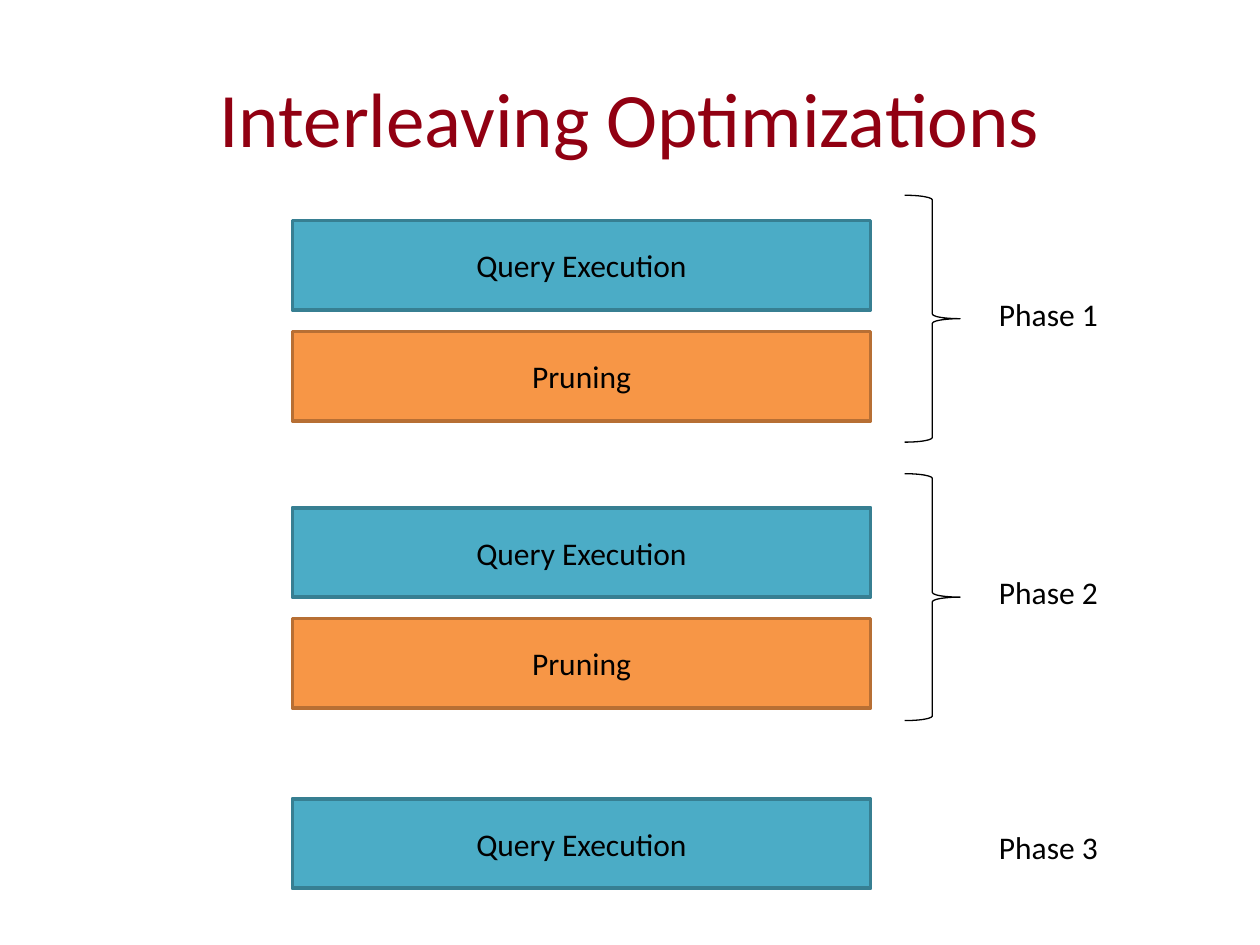
from pptx import Presentation
from pptx.dml.color import RGBColor
from pptx.enum import shapes, text
from pptx.util import Inches, Pt

STEPS = {
    "Query Execution": ("4BACC6", "377F92"),
    "Pruning": ("F79646", "B76F34"),
}
STEP_PITCH = 0.88


def color(value):
    return RGBColor.from_string(value)


def write(sp, words, size, font_color, align, anchor):
    tf = sp.text_frame
    tf.text = words
    tf.word_wrap = True
    tf.vertical_anchor = anchor
    p = tf.paragraphs[0]
    p.alignment = align
    font = p.runs[0].font
    font.name = "Calibri"
    font.size = Pt(size)
    font.color.rgb = color(font_color)


def add_label(s, box, words, size=18, font_color="000000",
              align=text.PP_ALIGN.LEFT, anchor=text.MSO_ANCHOR.TOP):
    sp = s.shapes.add_textbox(*map(Inches, box))
    write(sp, words, size, font_color, align, anchor)


def add_step(s, box, name):
    fill, line = STEPS[name]
    sp = s.shapes.add_shape(shapes.MSO_SHAPE.RECTANGLE, *map(Inches, box))
    sp.shadow.inherit = False
    sp.fill.solid()
    sp.fill.fore_color.rgb = color(fill)
    sp.line.color.rgb = color(line)
    sp.line.width = Pt(2)
    write(sp, name, 18, "000000", text.PP_ALIGN.CENTER, text.MSO_ANCHOR.MIDDLE)


def add_brace(s, box):
    sp = s.shapes.add_shape(shapes.MSO_SHAPE.RIGHT_BRACE, *map(Inches, box))
    sp.shadow.inherit = False
    sp.fill.background()
    sp.line.color.rgb = color("000000")
    sp.line.width = Pt(0.75)


def add_phase(s, box, label, label_top, steps, brace_top=None):
    left, top, width, height = box
    for i, name in enumerate(steps):
        add_step(s, (left, top + i * STEP_PITCH, width, height), name)
    if brace_top is not None:
        add_brace(s, (left + 4.86, brace_top, 0.44, 1.96))
    add_label(s, (left + 5.51, label_top, 1.19, 0.4), label)


def main():
    prs = Presentation()
    prs.slide_width, prs.slide_height = Inches(10), Inches(7.5)
    s = prs.slides.add_slide(prs.slide_layouts[6])
    add_label(s, (0.5, 0.3, 9, 1.25), "Interleaving Optimizations", 44, "910012",
              text.PP_ALIGN.CENTER, text.MSO_ANCHOR.MIDDLE)
    both = list(STEPS)
    phases = [
        (1.75, 2.29, both, 1.55),
        (4.03, 4.5, both, 3.76),
        (6.34, 6.52, both[:1], None),
    ]
    for number, (top, label_top, steps, brace_top) in enumerate(phases, 1):
        add_phase(s, (2.32, top, 4.59, 0.71), f"Phase {number}", label_top,
                  steps, brace_top)
    prs.save("out.pptx")


if __name__ == "__main__":
    main()
